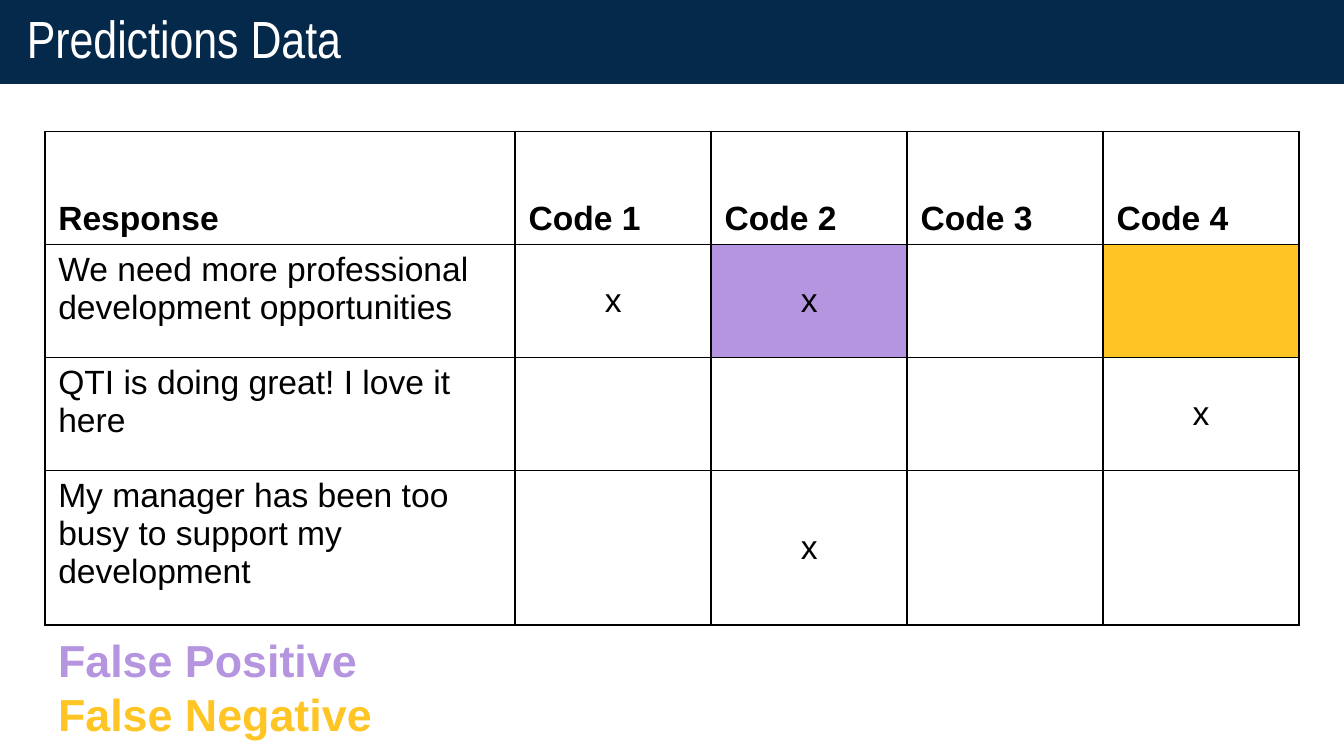
"""Build the predictions slide: title bar, coded response table and colour key."""
from dataclasses import dataclass

import pptx
import pptx.dml.color
import pptx.enum.shapes
import pptx.enum.text
import pptx.oxml
import pptx.oxml.ns
import pptx.util

ALIGN = pptx.enum.text.PP_ALIGN
ANCHOR = pptx.enum.text.MSO_ANCHOR


@dataclass(frozen=True)
class Theme:
    navy: str = "04294A"
    white: str = "FFFFFF"
    black: str = "000000"
    positive: str = "B695E0"
    negative: str = "FFC525"
    body_font: str = "Arial"
    title_font: str = "Arial Narrow"
    title_size: int = 28
    key_size: int = 24
    body_size: int = 18
    border: int = 1


@dataclass(frozen=True)
class Box:
    left: float
    top: float
    width: float
    height: float

    def emu(self) -> list[int]:
        return [percent(share, side) for share, side in
                zip((self.left, self.top, self.width, self.height), (WIDTH, HEIGHT) * 2)]


@dataclass(frozen=True)
class Response:
    text: str
    marks: tuple[str, ...]
    fills: tuple[str, ...] = ("", "", "", "")


THEME = Theme()
WIDTH = pptx.util.Inches(10)
HEIGHT = WIDTH * 9 // 16
COLUMNS = (35,) + (14.58,) * 4
ROWS = (14.95,) * 3 + (20.4,)
TITLE_BOX = Box(0, 0, 100, 11.11)
TABLE_BOX = Box(3.34, 17.42, sum(COLUMNS), sum(ROWS))
KEY_BOX = Box(3.34, 82.84, 93.6, 16.18)
HEADINGS = ("Response",) + tuple(f"Code {n}" for n in range(1, 5))
RESPONSES = (
    Response("We need more professional development opportunities",
             ("x", "x", "", ""), ("", THEME.positive, "", THEME.negative)),
    Response("QTI is doing great! I love it here", ("", "", "", "x")),
    Response("My manager has been too busy to support my development", ("", "x", "", "")),
)
KEY = (("False Positive", THEME.positive), ("False Negative", THEME.negative))


def percent(share: float, side: int) -> int:
    return round(share * side / 100)


def rgb(color: str) -> pptx.dml.color.RGBColor:
    return pptx.dml.color.RGBColor.from_string(color)


def write(p, text: str, color: str = THEME.black, align=ALIGN.LEFT, **font) -> None:
    p.alignment = align
    r = p.add_run()
    r.text = text
    r.font.color.rgb = rgb(color)
    formats = {"name": THEME.body_font, "size": THEME.body_size, "bold": False} | font
    formats["size"] = pptx.util.Pt(formats["size"])
    for name, value in formats.items():
        setattr(r.font, name, value)


def add_title(s, text: str) -> None:
    sp = s.shapes.add_shape(pptx.enum.shapes.MSO_SHAPE.RECTANGLE, *TITLE_BOX.emu())
    sp.shadow.inherit = False
    sp.fill.solid()
    sp.fill.fore_color.rgb = rgb(THEME.navy)
    sp.line.fill.background()
    tf = sp.text_frame
    formats = {"word_wrap": True, "vertical_anchor": ANCHOR.MIDDLE,
               "margin_left": percent(2, WIDTH), "margin_right": percent(2, WIDTH),
               "margin_top": percent(1, WIDTH), "margin_bottom": percent(1, WIDTH)}
    for name, value in formats.items():
        setattr(tf, name, value)
    p = tf.paragraphs[0]
    p.line_spacing = 0.9
    write(p, text, THEME.white, name=THEME.title_font, size=THEME.title_size)


def add_borders(cell) -> None:
    tc_pr = cell._tc.get_or_add_tcPr()
    for i, side in enumerate("LRTB"):
        tc_pr.insert(i, pptx.oxml.parse_xml(
            f'<a:ln{side} {pptx.oxml.ns.nsdecls("a")} w="{pptx.util.Pt(THEME.border)}">'
            f'<a:solidFill><a:srgbClr val="{THEME.black}"/></a:solidFill></a:ln{side}>'))


def fill_cell(cell, text: str, anchor, align=ALIGN.LEFT, fill: str = "",
              bold: bool = False) -> None:
    cell.vertical_anchor = anchor
    if fill:
        cell.fill.solid()
        cell.fill.fore_color.rgb = rgb(fill)
    else:
        cell.fill.background()
    add_borders(cell)
    if text:
        write(cell.text_frame.paragraphs[0], text, align=align, bold=bold)


def add_responses(s) -> None:
    table = s.shapes.add_table(len(ROWS), len(COLUMNS), *TABLE_BOX.emu()).table
    for column, share in zip(table.columns, COLUMNS):
        column.width = percent(share, WIDTH)
    for row, share in zip(table.rows, ROWS):
        row.height = percent(share, HEIGHT)
    for c, heading in enumerate(HEADINGS):
        fill_cell(table.cell(0, c), heading, ANCHOR.BOTTOM, bold=True)
    for r, response in enumerate(RESPONSES, 1):
        fill_cell(table.cell(r, 0), response.text, ANCHOR.TOP)
        for c, (mark, fill) in enumerate(zip(response.marks, response.fills), 1):
            fill_cell(table.cell(r, c), mark, ANCHOR.MIDDLE, ALIGN.CENTER, fill)


def add_key(s) -> None:
    tf = s.shapes.add_textbox(*KEY_BOX.emu()).text_frame
    tf.word_wrap = True
    for i, (label, color) in enumerate(KEY):
        p = tf.add_paragraph() if i else tf.paragraphs[0]
        write(p, label, color, size=THEME.key_size, bold=True)


def main() -> None:
    prs = pptx.Presentation()
    prs.slide_width, prs.slide_height = WIDTH, HEIGHT
    s = prs.slides.add_slide(prs.slide_layouts[6])
    add_title(s, "Predictions Data")
    add_responses(s)
    add_key(s)
    prs.save("out.pptx")


if __name__ == "__main__":
    main()
